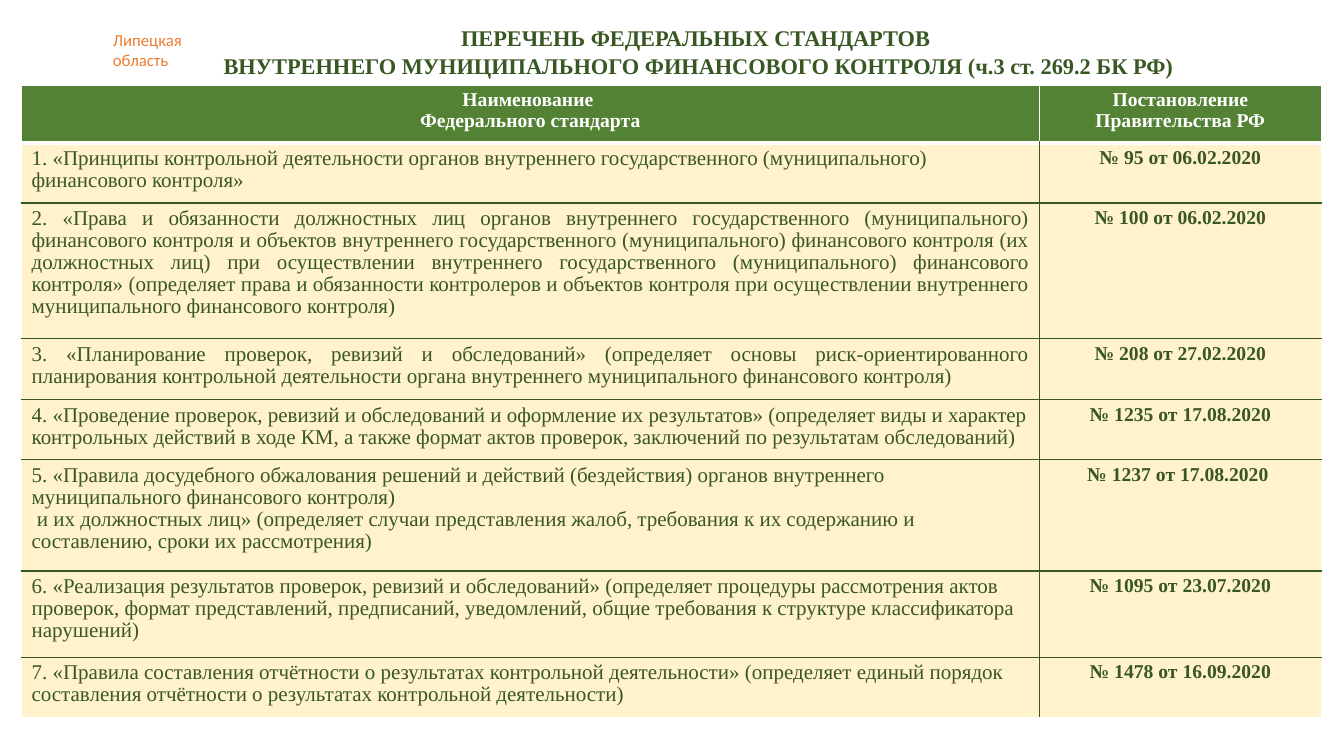
from dataclasses import dataclass

from lxml import etree
from pptx import Presentation
from pptx.dml.color import RGBColor
from pptx.enum.text import MSO_ANCHOR, MSO_AUTO_SIZE, PP_ALIGN
from pptx.oxml.ns import qn
from pptx.util import Pt

LEFT, MID, JUST = PP_ALIGN.LEFT, PP_ALIGN.CENTER, PP_ALIGN.JUSTIFY
TOP = MSO_ANCHOR.TOP
NO_FIT = MSO_AUTO_SIZE.NONE
TITLE_ONLY = 5


@dataclass(frozen=True)
class Theme:
    dark: str = "385723"
    green: str = "548235"
    cream: str = "FFF2CC"
    white: str = "FFFFFF"
    orange: str = "ED7D31"
    serif: str = "Times New Roman"
    sans: str = "Calibri"
    title: float = 16
    body: float = 15
    head: float = 14
    label: float = 12


TITLE = ["ПЕРЕЧЕНЬ ФЕДЕРАЛЬНЫХ СТАНДАРТОВ ",
         "ВНУТРЕННЕГО МУНИЦИПАЛЬНОГО ФИНАНСОВОГО КОНТРОЛЯ (ч.3 ст. 269.2 БК РФ)"]
HEADS = [["Наименование ", "Федерального стандарта"],
         ["Постановление Правительства РФ"]]
# row height, alignment, name of the standard, decree
ROWS = [
    (43, LEFT, ["1. «Принципы контрольной деятельности органов внутреннего "
                "государственного (муниципального) финансового контроля»"],
     "№ 95 от 06.02.2020"),
    (97, JUST, ["2. «Права и обязанности должностных лиц органов внутреннего "
                "государственного (муниципального) финансового контроля и "
                "объектов внутреннего государственного (муниципального) "
                "финансового контроля (их должностных лиц) при осуществлении "
                "внутреннего государственного (муниципального) финансового "
                "контроля» (определяет права и обязанности контролеров и "
                "объектов контроля при осуществлении внутреннего "
                "муниципального финансового контроля) "],
     "№ 100 от 06.02.2020"),
    (43.5, JUST, ["3. «Планирование проверок, ревизий и обследований» "
                  "(определяет основы риск-ориентированного планирования "
                  "контрольной деятельности органа внутреннего "
                  "муниципального финансового контроля) "],
     "№ 208 от 27.02.2020"),
    (43, LEFT, ["4. «Проведение проверок, ревизий и обследований и оформление "
                "их результатов» (определяет виды и характер контрольных "
                "действий в ходе КМ, а также формат актов проверок, "
                "заключений по результатам обследований)"],
     "№ 1235 от 17.08.2020"),
    (79.5, LEFT, ["5. «Правила досудебного обжалования решений и действий "
                  "(бездействия) органов внутреннего муниципального "
                  "финансового контроля)",
                  " и их должностных лиц» (определяет случаи представления "
                  "жалоб, требования к их содержанию и составлению, сроки их "
                  "рассмотрения)"],
     "№ 1237 от 17.08.2020 "),
    (61.5, LEFT, ["6. «Реализация результатов проверок, ревизий и "
                  "обследований» (определяет процедуры рассмотрения актов "
                  "проверок, формат представлений, предписаний, уведомлений, "
                  "общие требования к структуре классификатора нарушений)"],
     "№ 1095 от 23.07.2020"),
    (43, LEFT, ["7. «Правила составления отчётности о результатах контрольной "
                "деятельности» (определяет единый порядок составления "
                "отчётности о результатах контрольной деятельности)"],
     "№ 1478 от 16.09.2020"),
]


class Page:
    def __init__(self, theme, slide):
        self.theme, self.slide = theme, slide

    def put(self, frame, lines, size, color, align=LEFT, bold=False,
            face=None, pitch=1.0):
        """Fill a text frame, one paragraph for each line."""
        for i, line in enumerate(lines):
            para = frame.add_paragraph() if i else frame.paragraphs[0]
            para.alignment, para.line_spacing = align, pitch
            run = para.add_run()
            run.text = line
            font = run.font
            font.name, font.size, font.bold = face or self.theme.serif, Pt(size), bold
            font.color.rgb = RGBColor.from_string(color)

    def title(self, lines, x, y, w, h):
        box = self.slide.shapes.title
        box.left, box.top, box.width, box.height = Pt(x), Pt(y), Pt(w), Pt(h)
        frame = box.text_frame
        frame.auto_size, frame.word_wrap = NO_FIT, True
        frame.vertical_anchor = TOP
        self.put(frame, lines, self.theme.title, self.theme.dark, MID, True,
                 pitch=1.05)

    def label(self, lines, x, y, w, h):
        box = self.slide.shapes.add_textbox(Pt(x), Pt(y), Pt(w), Pt(h))
        box.text_frame.word_wrap = True
        self.put(box.text_frame, lines, self.theme.label, self.theme.orange,
                 face=self.theme.sans)

    def edge(self, cell, sides):
        """Draw borders given as (colour, width) for left, right, top, bottom."""
        props = cell._tc.get_or_add_tcPr()
        for i, (tag, (color, width)) in enumerate(zip("LRTB", sides)):
            line = etree.Element(qn(f"a:ln{tag}"), w=str(Pt(width)))
            fill = etree.SubElement(line, qn("a:solidFill"))
            etree.SubElement(fill, qn("a:srgbClr"), val=color)
            props.insert(i, line)

    def cell(self, cell, lines, size, color, fill, sides, align, bold):
        cell.fill.solid()
        cell.fill.fore_color.rgb = RGBColor.from_string(fill)
        self.edge(cell, sides)
        self.put(cell.text_frame, lines, size, color, align, bold, pitch=0.95)

    def table(self, heads, rows, x, y, widths, top):
        """Draw the list of standards under a head row of height top."""
        t = self.theme
        highs = [top] + [row[0] for row in rows]
        grid = self.slide.shapes.add_table(
            len(highs), len(widths), Pt(x), Pt(y), Pt(sum(widths)),
            Pt(sum(highs))).table
        for col, width in zip(grid.columns, widths):
            col.width = Pt(width)
        for row, high in zip(grid.rows, highs):
            row.height = Pt(high)
        pale, dark, thick = (t.white, 1), (t.dark, 1), (t.white, 3)
        for c, lines in enumerate(heads):
            self.cell(grid.cell(0, c), lines, t.head, t.white, t.green,
                      (pale, pale, pale, thick), MID, True)
        for r, (_, align, name, decree) in enumerate(rows, 1):
            over = thick if r == 1 else dark
            under = pale if r == len(rows) else dark
            self.cell(grid.cell(r, 0), name, t.body, t.dark, t.cream,
                      (pale, dark, over, under), align, False)
            self.cell(grid.cell(r, 1), [decree], t.head, t.dark, t.cream,
                      (dark, pale, over, under), MID, True)


def main():
    deck = Presentation()
    deck.slide_width, deck.slide_height = Pt(960), Pt(540)
    page = Page(Theme(), deck.slides.add_slide(deck.slide_layouts[TITLE_ONLY]))
    page.label(["Липецкая", "область"], 73.5, 17.5, 65.5, 36)
    page.title(TITLE, 88.5, 12.5, 821, 46)
    page.table(HEADS, ROWS, 15.4, 61, (727, 201.5), 41)
    deck.save("out.pptx")


if __name__ == "__main__":
    main()
